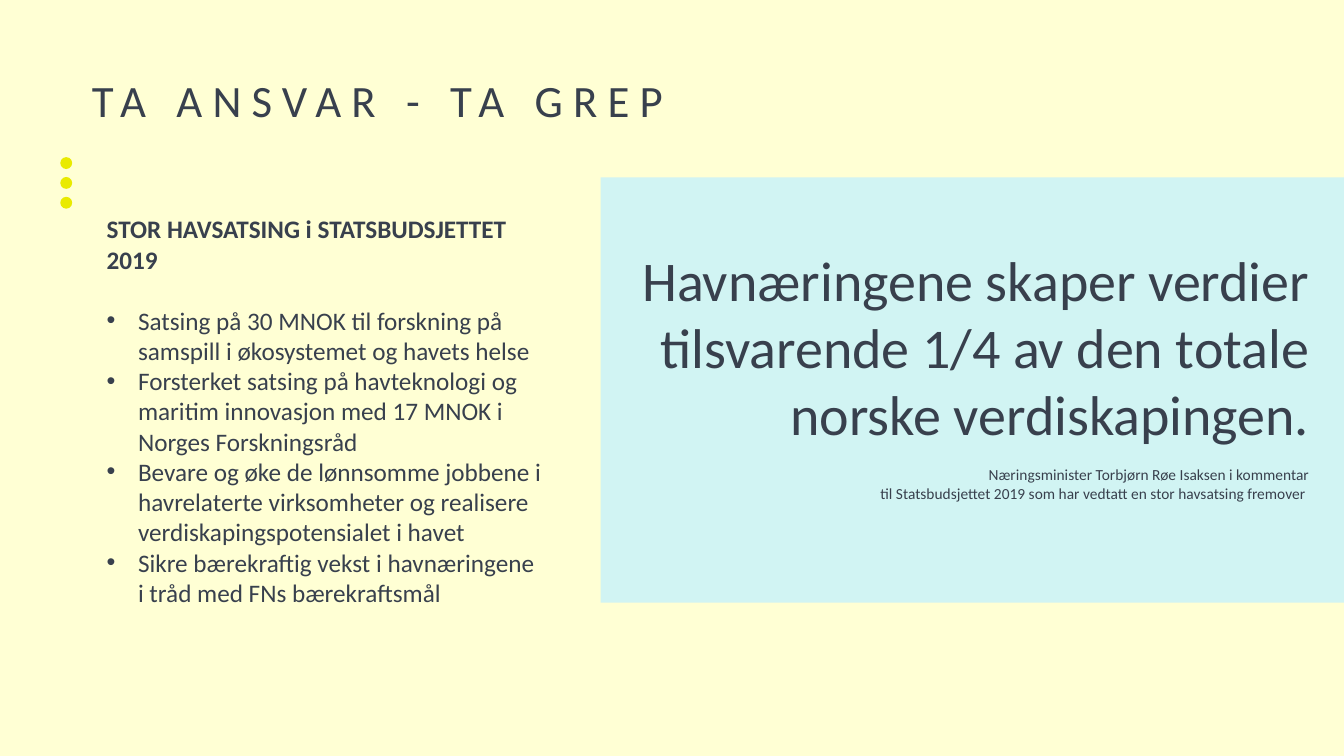
from lxml import etree
from pptx import Presentation
from pptx import util as u
from pptx.dml import color
from pptx.enum import shapes, text
from pptx.oxml import ns

FONT = "Calibri"
INK, CREAM, AQUA, YELLOW = "38404D", "FFFFD4", "D1F4F3", "E9EA00"

TITLE = "TA ANSVAR - TA GREP"
HEADING = "STOR HAVSATSING i STATSBUDSJETTET 2019"
MEASURES = [
    "Satsing på 30 MNOK til forskning på samspill i økosystemet og havets helse",
    "Forsterket satsing på havteknologi og maritim innovasjon med 17 MNOK i Norges Forskningsråd",
    "Bevare og øke de lønnsomme jobbene i havrelaterte virksomheter og realisere "
    "verdiskapingspotensialet i havet",
    "Sikre bærekraftig vekst i havnæringene i tråd med FNs bærekraftsmål",
]
QUOTE = "Havnæringene skaper verdier tilsvarende 1/4 av den totale norske verdiskapingen."
SOURCE_LINES = [
    "Næringsminister Torbjørn Røe Isaksen i kommentar",
    "til Statsbudsjettet 2019 som har vedtatt en stor havsatsing fremover ",
]

TITLE_BOX = (2.06, 1.7, 23.27, 1.63)
MEASURES_BOX = (2.44, 5.26, 11.46, 10.26)
QUOTE_BOX = (15.77, 6.05, 17.48, 6.83)
PANEL = (15.14, 4.47, 18.73, 10.72)
DOT_LEFT, DOT_TOP, DOT_SIZE, DOT_STEP, DOT_COUNT = 1.52, 3.96, 0.3, 0.5, 3


def rgb(value):
    return color.RGBColor.from_string(value)


def lengths(box):
    return [u.Cm(value) for value in box]


def add_filled(slide, kind, box, fill):
    shape = slide.shapes.add_shape(kind, *lengths(box))
    shape.shadow.inherit = False
    shape.fill.solid()
    shape.fill.fore_color.rgb = rgb(fill)
    shape.line.fill.background()


def prepare_frame(shape):
    frame = shape.text_frame
    frame.word_wrap = True
    frame.auto_size = text.MSO_AUTO_SIZE.NONE
    frame.vertical_anchor = text.MSO_ANCHOR.TOP
    return frame


def add_frame(slide, box):
    return prepare_frame(slide.shapes.add_textbox(*lengths(box)))


def write(paragraph, words, size, bold=False, align=text.PP_ALIGN.LEFT, before=0):
    paragraph.alignment = align
    paragraph.space_before = u.Pt(before)
    run = paragraph.add_run()
    run.text = words
    run.font.name = FONT
    run.font.size = u.Pt(size)
    run.font.bold = bold
    run.font.color.rgb = rgb(INK)
    return run


def add_bullet(paragraph):
    properties = paragraph._p.get_or_add_pPr()
    properties.set("marL", str(u.Cm(0.79)))
    properties.set("indent", str(u.Cm(-0.79)))
    etree.SubElement(properties, ns.qn("a:buFont")).set("typeface", "Arial")
    etree.SubElement(properties, ns.qn("a:buChar")).set("char", "•")


presentation = Presentation()
presentation.slide_width = u.Cm(33.87)
presentation.slide_height = u.Cm(19.05)
slide = presentation.slides.add_slide(presentation.slide_layouts[5])
slide.background.fill.solid()
slide.background.fill.fore_color.rgb = rgb(CREAM)

title = slide.shapes.title
title.left, title.top, title.width, title.height = lengths(TITLE_BOX)
title_run = write(prepare_frame(title).paragraphs[0], TITLE, 32)
title_run.font._element.set("spc", "723")

add_filled(slide, shapes.MSO_SHAPE.RECTANGLE, PANEL, AQUA)
for index in range(DOT_COUNT):
    dot_box = (DOT_LEFT, DOT_TOP + index * DOT_STEP, DOT_SIZE, DOT_SIZE)
    add_filled(slide, shapes.MSO_SHAPE.FLOWCHART_CONNECTOR, dot_box, YELLOW)

quote = add_frame(slide, QUOTE_BOX)
write(quote.paragraphs[0], QUOTE, 40, align=text.PP_ALIGN.RIGHT)
for index, line in enumerate(SOURCE_LINES):
    before = 13.4 if index == 0 else 0
    write(quote.add_paragraph(), line, 11, align=text.PP_ALIGN.RIGHT, before=before)

measures = add_frame(slide, MEASURES_BOX)
write(measures.paragraphs[0], HEADING, 18, bold=True)
for index, measure in enumerate(MEASURES):
    paragraph = measures.add_paragraph()
    add_bullet(paragraph)
    write(paragraph, measure, 18, before=22 if index == 0 else 0)

presentation.save("out.pptx")
